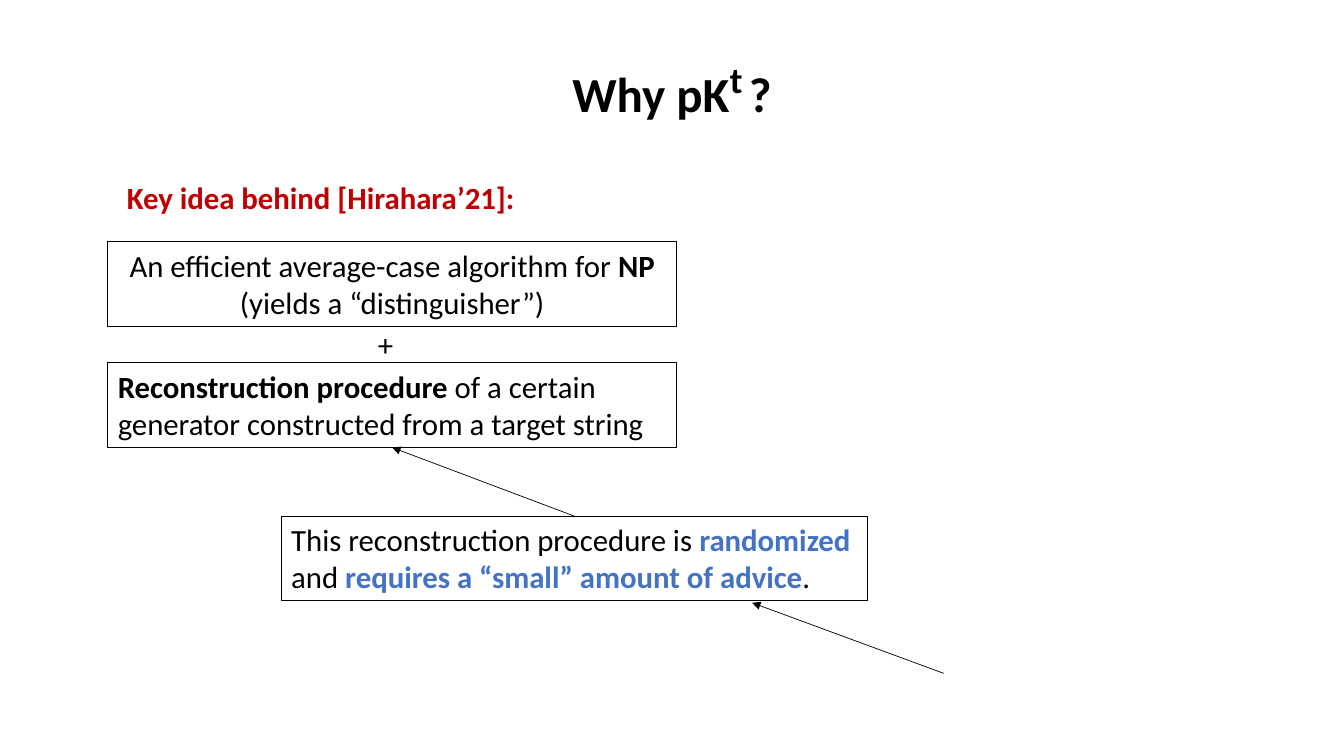
from dataclasses import dataclass

from lxml.etree import SubElement
from pptx import Presentation
from pptx.dml.color import RGBColor
from pptx.enum.shapes import MSO_CONNECTOR, MSO_SHAPE
from pptx.enum.text import MSO_ANCHOR, MSO_AUTO_SIZE, PP_ALIGN
from pptx.oxml.ns import qn
from pptx.util import Inches, Pt


@dataclass(frozen=True)
class Theme:
    font: str = "Calibri"
    black: RGBColor = RGBColor(0, 0, 0)
    red: RGBColor = RGBColor(0xC0, 0, 0)
    blue: RGBColor = RGBColor(0x44, 0x72, 0xC4)
    title: Pt = Pt(35)
    exponent: Pt = Pt(45)
    body: Pt = Pt(22)
    border: Pt = Pt(0.75)
    arrow: Pt = Pt(0.5)


THEME = Theme()
BOLD = {"bold": True}
ACCENT = {"bold": True, "color": THEME.blue}
HEADING = {"bold": True, "color": THEME.red}
TITLE = {"bold": True, "size": THEME.title}
EXPONENT = {"bold": True, "size": THEME.exponent, "baseline": 30000}


def add_run(p, text, style):
    r = p.add_run()
    r.text = text
    font = {"name": THEME.font, "size": THEME.body, "bold": False}
    font.update(style)
    r.font.color.rgb = font.pop("color", THEME.black)
    baseline = font.pop("baseline", None)
    for name, value in font.items():
        setattr(r.font, name, value)
    if baseline:
        r._r.get_or_add_rPr().set("baseline", str(baseline))


def fill_text(sp, runs, align):
    tf = sp.text_frame
    frame = {
        "word_wrap": True,
        "auto_size": MSO_AUTO_SIZE.SHAPE_TO_FIT_TEXT,
        "vertical_anchor": MSO_ANCHOR.TOP,
    }
    for name, value in frame.items():
        setattr(tf, name, value)
    p = tf.paragraphs[0]
    p.alignment = align
    for text, style in runs:
        add_run(p, text, style)


def add_label(s, at, runs, align=PP_ALIGN.LEFT):
    sp = s.shapes.add_textbox(*map(Inches, at))
    fill_text(sp, runs, align)


def add_box(s, at, runs, align=PP_ALIGN.LEFT):
    sp = s.shapes.add_shape(MSO_SHAPE.RECTANGLE, *map(Inches, at))
    sp.shadow.inherit = False
    sp.fill.background()
    sp.line.color.rgb = THEME.black
    sp.line.width = THEME.border
    fill_text(sp, runs, align)
    return sp


def add_arrow(s, start, end):
    c = s.shapes.add_connector(MSO_CONNECTOR.STRAIGHT, *map(Inches, start + end))
    c.line.color.rgb = THEME.black
    c.line.width = THEME.arrow
    spPr = c.element.spPr
    SubElement(spPr.find(qn("a:ln")), qn("a:tailEnd")).set("type", "triangle")
    SubElement(spPr, qn("a:effectLst"))
    return c


def main():
    prs = Presentation()
    prs.slide_width, prs.slide_height = Inches(13.33), Inches(7.5)
    s = prs.slides.add_slide(prs.slide_layouts[6])

    add_label(s, (0.78, 0.44, 11.77, 0.69), [
        ("Why pK", TITLE),
        ("t", EXPONENT),
        (" ", {**EXPONENT, "size": THEME.title}),
        ("?", TITLE),
    ], PP_ALIGN.CENTER)
    add_label(s, (1.16, 1.72, 7.15, 0.47), [("Key idea behind [Hirahara’21]:", HEADING)])

    add_box(s, (1.07, 2.4, 5.64, 0.84), [
        ("An efficient average-case algorithm for ", {}),
        ("NP", BOLD),
        (" (yields a “distinguisher”)", {}),
    ], PP_ALIGN.CENTER)
    add_label(s, (3.65, 3.18, 0.33, 0.47), [("+", {})])
    reconstruction = add_box(s, (1.07, 3.6, 5.64, 0.84), [
        ("Reconstruction procedure", BOLD),
        (" of a certain generator constructed from a target string", {}),
    ])
    advice = add_box(s, (2.79, 5.12, 5.81, 0.84), [
        ("This reconstruction procedure is ", {}),
        ("randomized", ACCENT),
        (" and ", {}),
        ("requires a “small” amount of advice", ACCENT),
        (".", {}),
    ])

    link = add_arrow(s, (5.69, 5.12), (3.89, 4.44))
    link.begin_connect(advice, 0)
    link.end_connect(reconstruction, 2)
    add_arrow(s, (9.36, 6.68), (7.46, 5.98))

    prs.save("out.pptx")


if __name__ == "__main__":
    main()
